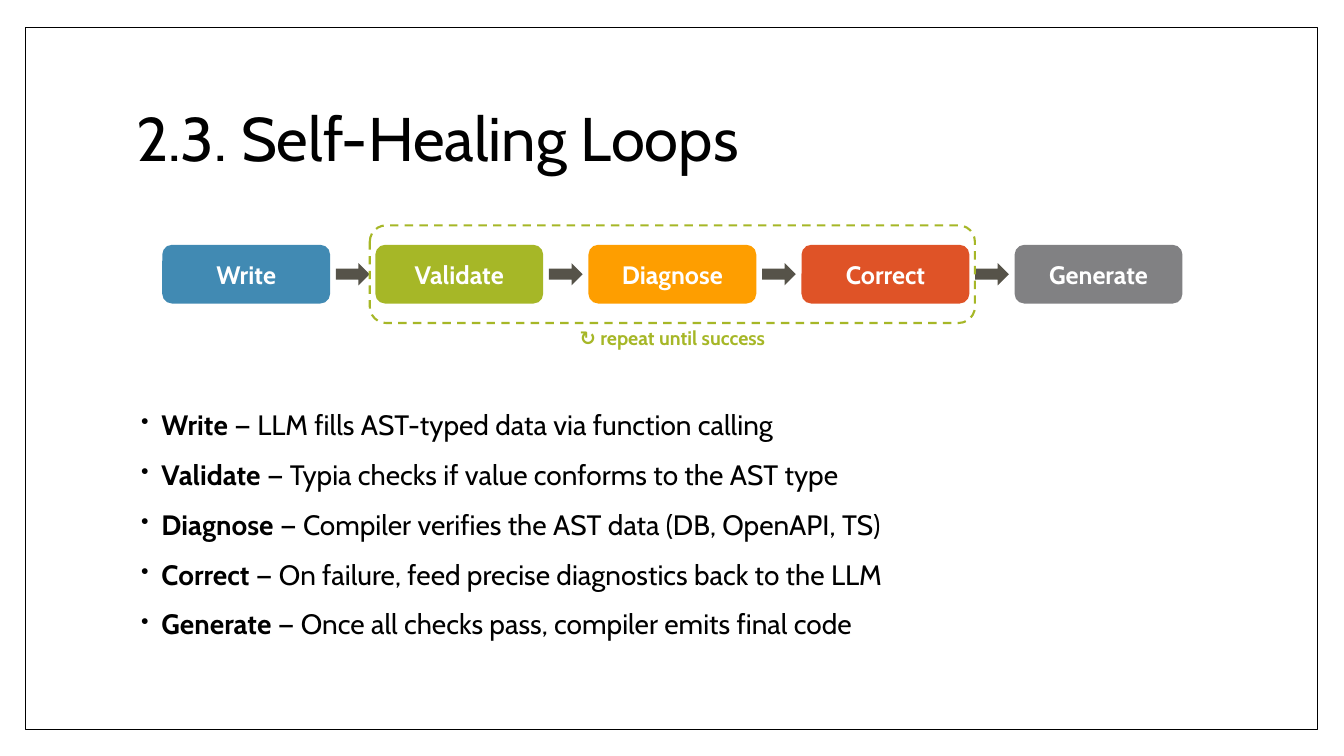
import pptx
import pptx.util
import pptx.dml.color
import pptx.enum.dml
import pptx.enum.shapes
import pptx.enum.text
import pptx.oxml
import pptx.oxml.ns

Cm = pptx.util.Cm
Pt = pptx.util.Pt
RGBColor = pptx.dml.color.RGBColor
SHAPE = pptx.enum.shapes.MSO_SHAPE
ALIGN = pptx.enum.text.PP_ALIGN
ANCHOR = pptx.enum.text.MSO_ANCHOR

FONT = "Cabin"
BLACK = RGBColor(0x00, 0x00, 0x00)
WHITE = RGBColor(0xFF, 0xFF, 0xFF)
BLUE = RGBColor(0x41, 0x8A, 0xB3)
GREEN = RGBColor(0xA6, 0xB7, 0x27)
ORANGE = RGBColor(0xFE, 0x9E, 0x00)
RED = RGBColor(0xDF, 0x53, 0x27)
GRAY = RGBColor(0x81, 0x81, 0x83)
DARK = RGBColor(0x56, 0x53, 0x49)

STEPS = [
    ("Write", BLUE, "LLM fills AST-typed data via function calling"),
    ("Validate", GREEN, "Typia checks if value conforms to the AST type"),
    ("Diagnose", ORANGE, "Compiler verifies the AST data (DB, OpenAPI, TS)"),
    ("Correct", RED, "On failure, feed precise diagnostics back to the LLM"),
    ("Generate", GRAY, "Once all checks pass, compiler emits final code"),
]
LOOP_FROM, LOOP_TO = 1, 3
BULLET = (
    '<a:buClr %s><a:srgbClr val="000000"/></a:buClr>',
    '<a:buSzPct %s val="80000"/>',
    '<a:buChar %s char="•"/>',
)


def add_box(slide, kind, box, fill=None, line=None, width=1):
    shape = slide.shapes.add_shape(kind, *box)
    shape.shadow.inherit = False
    if fill is None:
        shape.fill.background()
    else:
        shape.fill.solid()
        shape.fill.fore_color.rgb = fill
    if line is None:
        shape.line.fill.background()
    else:
        shape.line.color.rgb = line
        shape.line.width = Pt(width)
    return shape


def set_font(para, size, color, bold=None):
    font = para.font
    font.name = FONT
    font.size = Pt(size)
    font.color.rgb = color
    font.bold = bold


def add_label(frame, text, size, color):
    """Put one bold centred line in a frame without margins."""
    frame.margin_left = frame.margin_right = 0
    frame.margin_top = frame.margin_bottom = 0
    para = frame.paragraphs[0]
    para.text = text
    para.alignment = ALIGN.CENTER
    set_font(para, size, color, True)


def add_title(slide, box, text):
    frame = slide.shapes.add_textbox(*box).text_frame
    frame.word_wrap = True
    frame.vertical_anchor = ANCHOR.MIDDLE
    para = frame.paragraphs[0]
    para.text = text
    para.line_spacing = 0.9
    set_font(para, 44, BLACK)


def add_flow(slide, box):
    """Draw the steps, the arrows between them and the loop round the middle."""
    left, top, width, height = box
    step = Cm(4.23)
    pitch = (width - step) // (len(STEPS) - 1)
    long, tall = Cm(0.85), Cm(0.56)
    for i, (name, color, _) in enumerate(STEPS):
        x = left + i * pitch
        if i:
            gap = pitch - step
            spot = (x - (gap + long) // 2, top + (height - tall) // 2, long, tall)
            add_box(slide, SHAPE.RIGHT_ARROW, spot, DARK)
        card = add_box(slide, SHAPE.ROUNDED_RECTANGLE, (x, top, step, height), color)
        card.text_frame.word_wrap = False
        card.text_frame.vertical_anchor = ANCHOR.MIDDLE
        add_label(card.text_frame, name, 18, WHITE)

    side, pad = Cm(0.14), Cm(0.49)
    x = left + LOOP_FROM * pitch - side
    span = (LOOP_TO - LOOP_FROM) * pitch + step + 2 * side
    ring = (x, top - pad, span, height + 2 * pad)
    loop = add_box(slide, SHAPE.ROUNDED_RECTANGLE, ring, line=GREEN, width=1.5)
    loop.line.dash_style = pptx.enum.dml.MSO_LINE.DASH

    below = top + height + pad + Cm(0.08)
    note = slide.shapes.add_textbox(x, below, span, Cm(0.79)).text_frame
    note.word_wrap = True
    add_label(note, "↻ repeat until success", 14, GREEN)


def add_list(slide, box):
    frame = slide.shapes.add_textbox(*box).text_frame
    frame.word_wrap = True
    for i, (name, _, text) in enumerate(STEPS):
        para = frame.add_paragraph() if i else frame.paragraphs[0]
        props = para._p.get_or_add_pPr()
        props.set("marL", str(Cm(0.64)))
        props.set("indent", str(Cm(-0.51)))
        for tag in BULLET:
            props.append(pptx.oxml.parse_xml(tag % pptx.oxml.ns.nsdecls("a")))
        para.line_spacing = 0.9
        para.space_before = Pt(14 if i else 0)
        set_font(para, 20, BLACK)
        head = para.add_run()
        head.text = name
        head.font.bold = True
        para.add_run().text = " — " + text


def main():
    deck = pptx.Presentation()
    deck.slide_width, deck.slide_height = Cm(33.87), Cm(19.05)
    slide = deck.slides.add_slide(deck.slide_layouts[6])
    border = (Cm(0.64), Cm(0.69), Cm(32.56), Cm(17.7))
    add_box(slide, SHAPE.RECTANGLE, border, WHITE, BLACK)
    left, width = Cm(3.18), Cm(27.43)
    add_title(slide, (left, Cm(1.7), width, Cm(3.76)), "2.3. Self-Healing Loops")
    add_list(slide, (left, Cm(10.24), width, Cm(7.06)))
    add_flow(slide, (Cm(4.09), Cm(6.17), Cm(25.71), Cm(1.48)))
    deck.save("out.pptx")


if __name__ == "__main__":
    main()
